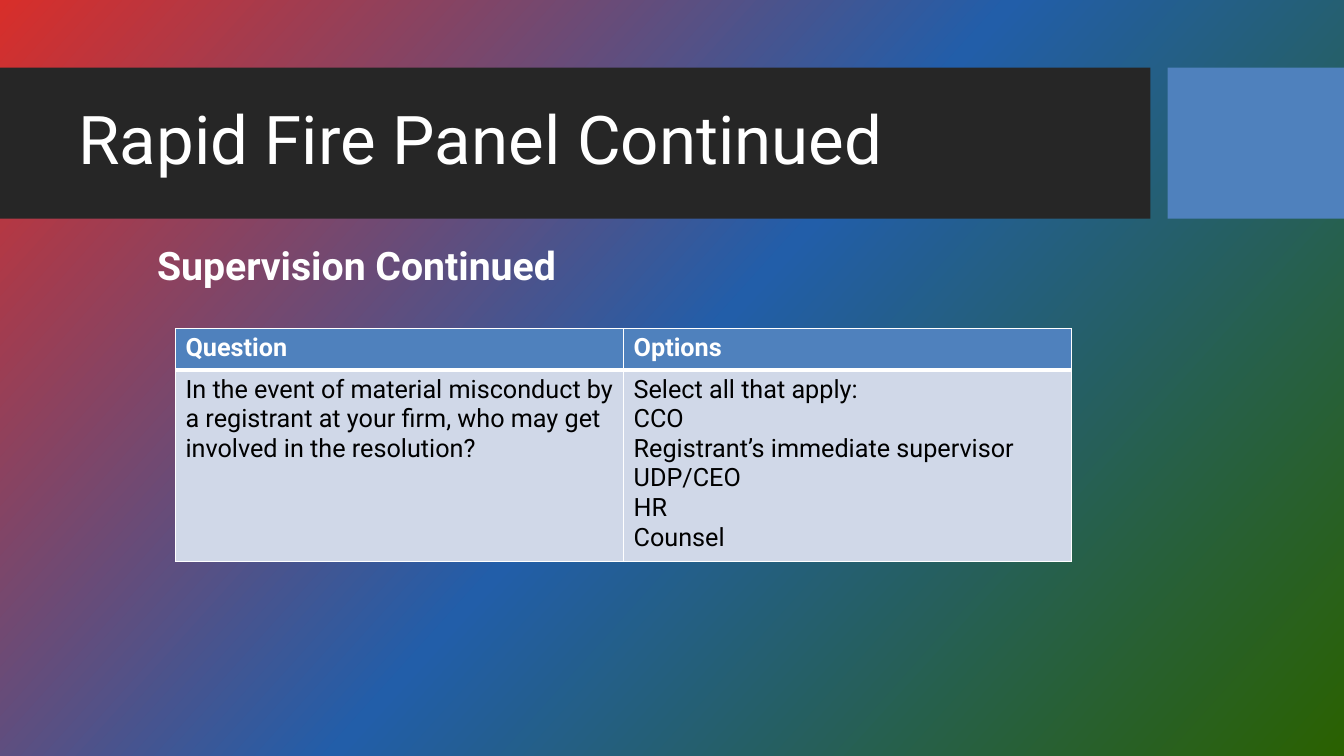
from copy import deepcopy

from pptx import Presentation
from pptx.dml.color import RGBColor
from pptx.enum.shapes import MSO_SHAPE
from pptx.enum.text import MSO_ANCHOR
from pptx.oxml import parse_xml
from pptx.oxml.ns import nsdecls, qn
from pptx.util import Inches, Pt

TITLE = "Rapid Fire Panel Continued"
SUBTITLE = "Supervision Continued"
QUIZ = [
    ("Question", "Options"),
    (
        "In the event of material misconduct by a registrant at your firm, "
        "who may get involved in the resolution?",
        "Select all that apply:\nCCO\nRegistrant’s immediate supervisor\n"
        "UDP/CEO\nHR\nCounsel",
    ),
]

COLORS = {
    "band": "262626", "accent": "4F81BD", "body": "D0D8E8",
    "light": "FFFFFF", "dark": "000000",
}
BACKDROP = [(0, "D82E2A"), (0.5, "225EA9"), (1, "2A6100")]
BACKDROP_ANGLE = 42
FONT = "Roboto"

SLIDE_W, SLIDE_H = 13.33, 7.5
BAND_TOP, BAND_H = 0.67, 1.5
BAND_W, BAND_GAP = 11.41, 0.17
TITLE_LEFT, TITLE_H = 0.68, 1
TABLE_LEFT, TABLE_TOP, COLUMN_W = 1.74, 3.26, 4.445
ROW_HEIGHTS = [0.41, 1.9]


def color(name):
    return RGBColor.from_string(COLORS[name])


def style(paragraph, size, color_name, bold=False):
    font = paragraph.font
    font.name, font.size, font.bold = FONT, Pt(size), bold
    font.color.rgb = color(color_name)


def paint_backdrop(slide):
    fill = slide.background.fill
    fill.gradient()
    fill.gradient_angle = 360 - BACKDROP_ANGLE
    first_stop = slide.element.find(".//" + qn("a:gs"))
    first_stop.addnext(deepcopy(first_stop))
    for stop, (position, hex_color) in zip(fill.gradient_stops, BACKDROP):
        stop.position = position
        stop.color.rgb = RGBColor.from_string(hex_color)


def add_block(slide, left, width, fill_name):
    block = slide.shapes.add_shape(
        MSO_SHAPE.RECTANGLE, Inches(left), Inches(BAND_TOP), Inches(width), Inches(BAND_H))
    block.shadow.inherit = False
    block.fill.solid()
    block.fill.fore_color.rgb = color(fill_name)
    block.line.fill.background()


def add_heading(slide, text, box, size, bold=False):
    frame = slide.shapes.add_textbox(*map(Inches, box)).text_frame
    frame.word_wrap = True
    frame.text = text
    style(frame.paragraphs[0], size, "light", bold)
    return frame


def border_cell(cell, widths):
    """Draw white borders; widths maps each side (L, R, T, B) to points."""
    properties = cell._tc.get_or_add_tcPr()
    for index, (side, width) in enumerate(widths.items()):
        properties.insert(index, parse_xml(
            f'<a:ln{side} {nsdecls("a")} w="{Pt(width)}"><a:solidFill>'
            f'<a:srgbClr val="{COLORS["light"]}"/></a:solidFill></a:ln{side}>'))


def add_quiz(slide):
    columns = len(QUIZ[0])
    table = slide.shapes.add_table(
        len(QUIZ), columns, Inches(TABLE_LEFT), Inches(TABLE_TOP),
        Inches(COLUMN_W * columns), Inches(sum(ROW_HEIGHTS))).table
    for row, height in zip(table.rows, ROW_HEIGHTS):
        row.height = Inches(height)
    for r, texts in enumerate(QUIZ):
        header = r == 0
        for c, text in enumerate(texts):
            cell = table.cell(r, c)
            cell.text = text
            for paragraph in cell.text_frame.paragraphs:
                style(paragraph, 18, "light" if header else "dark", header)
            cell.fill.solid()
            cell.fill.fore_color.rgb = color("accent" if header else "body")
            border_cell(cell, {"L": 1, "R": 1, "T": 3 if r == 1 else 1, "B": 3 if header else 1})


def main():
    deck = Presentation()
    deck.slide_width, deck.slide_height = Inches(SLIDE_W), Inches(SLIDE_H)
    slide = deck.slides.add_slide(deck.slide_layouts[6])
    paint_backdrop(slide)

    accent_left = BAND_W + BAND_GAP
    add_block(slide, 0, BAND_W, "band")
    add_block(slide, accent_left, SLIDE_W - accent_left, "accent")

    title_top = BAND_TOP + (BAND_H - TITLE_H) / 2
    title = add_heading(
        slide, TITLE, (TITLE_LEFT, title_top, BAND_W - TITLE_LEFT, TITLE_H), 48)
    title.vertical_anchor = MSO_ANCHOR.MIDDLE
    title.paragraphs[0].line_spacing = 0.9
    add_heading(slide, SUBTITLE, (1.46, 2.34, 11.65, 0.57), 28, bold=True)
    add_quiz(slide)
    deck.save("out.pptx")


if __name__ == "__main__":
    main()
